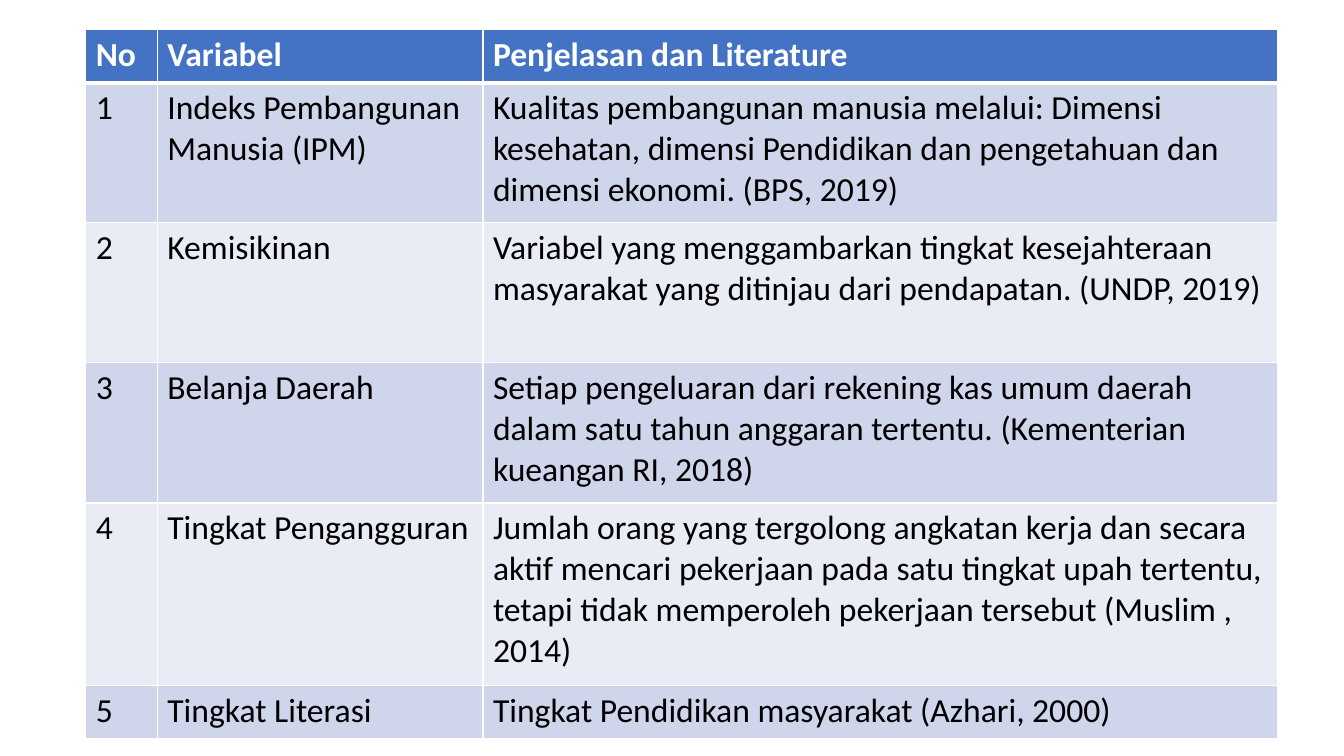
from lxml.etree import SubElement
from pptx import Presentation
from pptx.dml.color import RGBColor
from pptx.oxml.ns import qn
from pptx.util import Inches, Pt

COLORS = {
    "header": "4472C4",
    "odd": "CFD5EA",
    "even": "E9EBF5",
    "white": "FFFFFF",
    "text": "000000",
}
COLUMN_WIDTHS = [0.71, 3.23, 7.88]
ROW_HEIGHTS = [0.53, 1.39, 1.39, 1.39, 1.81, 0.53]
HEADINGS = ["No", "Variabel", "Penjelasan dan Literature"]
VARIABLES = [
    ("Indeks Pembangunan Manusia (IPM)",
     "Kualitas pembangunan manusia melalui: Dimensi kesehatan, dimensi "
     "Pendidikan dan pengetahuan dan dimensi ekonomi. (BPS, 2019)"),
    ("Kemisikinan",
     "Variabel yang menggambarkan tingkat kesejahteraan masyarakat yang "
     "ditinjau dari pendapatan. (UNDP, 2019)"),
    ("Belanja Daerah",
     "Setiap pengeluaran dari rekening kas umum daerah dalam satu tahun "
     "anggaran tertentu. (Kementerian kueangan RI, 2018)"),
    ("Tingkat Pengangguran",
     "Jumlah orang yang tergolong angkatan kerja dan secara aktif mencari "
     "pekerjaan pada satu tingkat upah tertentu, tetapi tidak memperoleh "
     "pekerjaan tersebut (Muslim , 2014)"),
    ("Tingkat Literasi", "Tingkat Pendidikan masyarakat (Azhari, 2000)"),
]


def add_text(tf, text, size=24, color="text", bold=False, font="Calibri"):
    r = tf.paragraphs[0].add_run()
    r.text = text
    r.font.name = font
    r.font.size = Pt(size)
    r.font.bold = bold
    r.font.color.rgb = RGBColor.from_string(COLORS[color])


def set_borders(cell, top=1, bottom=1, color="white"):
    tcPr = cell._tc.get_or_add_tcPr()
    for side, width in (("L", 1), ("R", 1), ("T", top), ("B", bottom)):
        ln = SubElement(tcPr, qn(f"a:ln{side}"), w=str(Pt(width)))
        fill = SubElement(ln, qn("a:solidFill"))
        SubElement(fill, qn("a:srgbClr"), val=COLORS[color])


def format_cell(cell, text, row):
    # Borders come before the fill in the cell properties
    set_borders(cell, top=3 if row == 1 else 1, bottom=3 if row == 0 else 1)
    fill = "header" if row == 0 else "odd" if row % 2 else "even"
    cell.fill.solid()
    cell.fill.fore_color.rgb = RGBColor.from_string(COLORS[fill])
    add_text(cell.text_frame, text, bold=row == 0,
             color="white" if row == 0 else "text")


def add_variable_table(s):
    rows = [HEADINGS]
    rows += [(str(n), *entry) for n, entry in enumerate(VARIABLES, 1)]
    table = s.shapes.add_table(
        len(rows), len(HEADINGS), Inches(0.85), Inches(0.29),
        Inches(sum(COLUMN_WIDTHS)), Inches(sum(ROW_HEIGHTS))).table

    # Column and row sizes
    for column, width in zip(table.columns, COLUMN_WIDTHS):
        column.width = Inches(width)
    for row, height in zip(table.rows, ROW_HEIGHTS):
        row.height = Inches(height)

    # Contents
    for i, texts in enumerate(rows):
        for j, text in enumerate(texts):
            format_cell(table.cell(i, j), text, i)


def main():
    prs = Presentation()
    prs.slide_width = Inches(13.33)
    prs.slide_height = Inches(7.5)
    s = prs.slides.add_slide(prs.slide_layouts[6])
    add_variable_table(s)
    prs.save("out.pptx")


if __name__ == "__main__":
    main()
